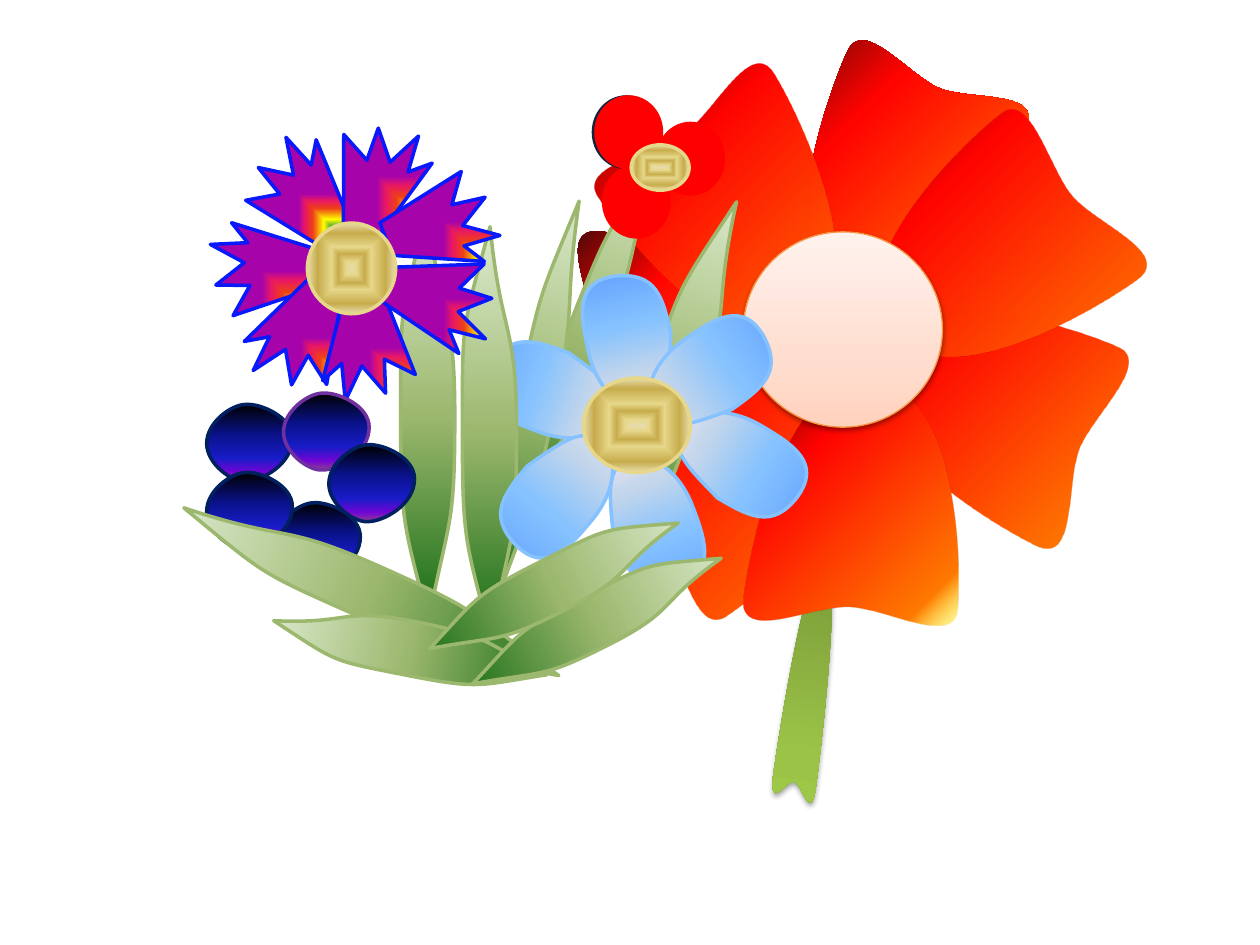
from dataclasses import dataclass, replace
from typing import Optional, Union

from lxml.etree import SubElement
from pptx import Presentation
from pptx.dml.color import RGBColor
from pptx.enum.shapes import MSO_SHAPE
from pptx.oxml.ns import qn
from pptx.oxml.xmlchemy import OxmlElement
from pptx.util import Pt

PX = 9144  # EMU; 100 px to the inch
CORNER = (100, 100, 0, 0)
CENTRE = (50, 50, 50, 50)


@dataclass(frozen=True)
class Gradient:
    stops: tuple  # (position, colour[, opacity]) in percent
    angle: Optional[int] = None
    form: str = ""
    focus: tuple = CORNER
    turns: bool = True


@dataclass(frozen=True)
class Outline:
    """First point, then line ends or, when curved, triples of Bezier points."""
    width: int
    height: int
    points: tuple
    curved: bool = True


@dataclass(frozen=True)
class Kind:
    fill: Union[Gradient, str]
    size: tuple
    outline: Optional[Outline] = None  # None is an ellipse
    line: str = ""
    line_pt: float = 2
    shadow: tuple = ()  # opacity percent, blur pt, distance pt


@dataclass(frozen=True)
class Part:
    kind: Kind
    left: int
    top: int
    rotation: float = 0
    size: tuple = ()


@dataclass(frozen=True)
class Theme:
    poppy: Gradient = Gradient(((0, "FFF200", 34), (12, "FF7A00"), (70, "FF0300"),
                                (100, "4D0808")), form="circle", turns=False)
    poppy_back: Gradient = Gradient(((0, "FFF200"), (12, "FF7A00"), (70, "FF0300"),
                                     (100, "4D0808")), form="circle", turns=False)
    stem: Gradient = Gradient(((0, "779737"), (80, "9BC348"), (100, "9DC746")), 270)
    peach: Gradient = Gradient(((0, "FFD2BD"), (35, "FFDED0"), (100, "FFF2ED")), 270)
    leaf: Gradient = Gradient(((0, "DDEBCF"), (50, "9CB86E"), (100, "156B13")), 90)
    sky: Gradient = Gradient(((0, "5E9EFF"), (40, "85C2FF"), (70, "C4D6EB"),
                              (100, "FFEBFA")), 90)
    cornflower: Gradient = Gradient(
        ((0, "A603AB"), (21, "0819FB"), (35, "1A8D48"), (52, "FFFF00"), (73, "EE3F17"),
         (88, "E81766"), (100, "A603AB")), form="rect", turns=False)
    night: Gradient = Gradient(((0, "000000"), (40, "0A128C"), (70, "181CC7"),
                                (88, "7005D4"), (100, "8C3D91")), 90)
    dusk: Gradient = Gradient(((0, "000000"), (20, "000040"), (50, "400040"),
                               (75, "8F0040"), (90, "F27300"), (100, "FFBF00")), 90)
    gold: Gradient = Gradient(
        ((0, "E6DCAC"), (12, "E6D78A"), (30, "C7AC4C"), (45, "E6D78A"), (77, "C7AC4C"),
         (100, "E6DCAC")), form="shape", focus=CENTRE)
    red: str = "FF0000"
    peach_line: str = "F69240"
    leaf_line: str = "9CB86E"
    sky_line: str = "85C2FF"
    cornflower_line: str = "0819FB"
    night_line: str = "002060"
    violet_line: str = "7030A0"
    dusk_line: str = "0F243E"
    gold_line: str = "E6D78A"
    shadow: str = "000000"


THEME = Theme()

POPPY_OUTLINE = Outline(171, 194, (
    (1, 12), (3, -18), (59, 13), (87, 14), (116, 15), (173, -14), (171, 19),
    (168, 52), (140, 198), (70, 193), (-1, 189), (-2, 42), (1, 12)))
LEAF_OUTLINE = Outline(43, 326, (
    (0, 163), (0, 73), (-1, 84), (22, 0), (31, 90), (43, 73), (43, 163),
    (43, 252), (39, 241), (22, 326), (3, 249), (0, 253), (0, 163)))
SKY_OUTLINE = Outline(67, 106, (
    (0, 54), (0, 24), (1, -3), (34, 0), (66, 4), (67, 24), (67, 54),
    (57, 92), (52, 106), (34, 106), (15, 106), (0, 83), (0, 54)))
NIGHT_OUTLINE = Outline(68, 61, (
    (0, 31), (0, 14), (20, 0), (31, 0), (43, -1), (68, 10), (68, 27),
    (68, 48), (43, 61), (31, 61), (20, 62), (0, 47), (0, 31)))
CORNFLOWER_OUTLINE = Outline(84, 90, (
    (0, 50), (27, 45), (10, 24), (38, 30), (32, 0), (52, 22), (56, 2),
    (84, 70), (65, 90)), curved=False)

POPPY = Kind(THEME.poppy, (171, 194), POPPY_OUTLINE)
POPPY_BACK = Kind(THEME.poppy_back, (155, 194), POPPY_OUTLINE)
STEM = Kind(THEME.stem, (35, 194), POPPY_OUTLINE, shadow=(35, 3.1, 1.8))
POPPY_HEART = Kind(THEME.peach, (158, 155), line=THEME.peach_line, line_pt=0.75,
                   shadow=(38, 3.1, 1.6))
LEAF = Kind(THEME.leaf, (43, 326), LEAF_OUTLINE, THEME.leaf_line)
SKY = Kind(THEME.sky, (67, 106), SKY_OUTLINE, THEME.sky_line)
CORNFLOWER = Kind(THEME.cornflower, (84, 90), CORNFLOWER_OUTLINE, THEME.cornflower_line)
NIGHT = Kind(THEME.night, (68, 61), NIGHT_OUTLINE, THEME.night_line)
VIOLET = replace(NIGHT, line=THEME.violet_line)
GOLD_HEART = Kind(THEME.gold, (70, 72), line=THEME.gold_line)
RED_DOT = Kind(THEME.red, (52, 56), line=THEME.red)
DUSK_DOT = Kind(THEME.dusk, (52, 56), line=THEME.dusk_line)
NARROW_LEAF, SHORT_LEAF = (30, 333), (43, 221)

BIG_POPPY = (
    Part(POPPY_BACK, 475, 164, 270), Part(POPPY_BACK, 637, 50, 20.6),
    Part(POPPY, 693, 230, 109.5), Part(POPPY, 508, 75, 322.5),
    Part(STEM, 623, 441, 186.8), Part(POPPY, 505, 273, 231.5),
    Part(POPPY, 590, 301, 180), Part(POPPY, 703, 113, 47.6),
    Part(POPPY_HEART, 590, 184),
)
BOUQUET = (
    Part(LEAF, 447, 107, 21.6, NARROW_LEAF), Part(LEAF, 410, 156, 11.9, NARROW_LEAF),
    Part(LEAF, 512, 152, 18.1),
    Part(SKY, 405, 258, 290.3), Part(SKY, 466, 218, 347.8), Part(SKY, 554, 314, 120.4),
    Part(LEAF, 367, 180),
    Part(SKY, 529, 244, 54.7), Part(SKY, 485, 361, 159.1), Part(SKY, 410, 339, 219.8),
    Part(LEAF, 318, 167),
    Part(CORNFLOWER, 195, 109), Part(CORNFLOWER, 257, 95, 58.6),
    Part(CORNFLOWER, 166, 170, 309.7), Part(CORNFLOWER, 197, 223, 248.2),
    Part(CORNFLOWER, 251, 231, 216.8), Part(CORNFLOWER, 310, 192, 146.4),
    Part(CORNFLOWER, 310, 131, 116.2),
    Part(NIGHT, 164, 321), Part(VIOLET, 225, 312), Part(NIGHT, 261, 353),
    Part(NIGHT, 218, 399), Part(NIGHT, 164, 375),
    Part(GOLD_HEART, 244, 177), Part(GOLD_HEART, 463, 300, size=(85, 75)),
    Part(RED_DOT, 522, 98), Part(LEAF, 273, 307, 294.1),
    Part(DUSK_DOT, 471, 77), Part(RED_DOT, 473, 77),
    Part(LEAF, 304, 404, 281.2, SHORT_LEAF), Part(RED_DOT, 479, 132),
    Part(LEAF, 452, 382, 63.2, SHORT_LEAF), Part(LEAF, 418, 354, 63.2, SHORT_LEAF),
    Part(GOLD_HEART, 501, 115, size=(46, 36)),
)


def add_child(parent, tag: str, **attributes):
    return SubElement(parent, qn(tag), {key: str(val) for key, val in attributes.items()})


def add_colour(parent, colour: str, opacity: int = 100) -> None:
    node = add_child(parent, "a:srgbClr", val=colour)
    if opacity < 100:
        add_child(node, "a:alpha", val=opacity * 1000)


def bend(shape, outline: Outline) -> None:
    """Turn the straight segments of a freeform into Bezier curves."""
    curve = shape._element.find(".//" + qn("a:path"))
    curve.clear()
    curve.set("w", str(outline.width))
    curve.set("h", str(outline.height))
    start, *rest = outline.points
    steps = [("a:moveTo", [start])]
    steps += [("a:cubicBezTo", rest[i:i + 3]) for i in range(0, len(rest), 3)]
    for tag, points in steps:
        step = add_child(curve, tag)
        for x, y in points:
            add_child(step, "a:pt", x=x, y=y)
    add_child(curve, "a:close")


def paint(shape, fill: Union[Gradient, str]) -> None:
    if isinstance(fill, str):
        shape.fill.solid()
        shape.fill.fore_color.rgb = RGBColor.from_string(fill)
        return
    shape.fill.background()
    empty = shape._element.spPr.find(qn("a:noFill"))
    node = OxmlElement("a:gradFill")
    node.set("rotWithShape", str(int(fill.turns)))
    stops = add_child(node, "a:gsLst")
    for position, *colour in fill.stops:
        add_colour(add_child(stops, "a:gs", pos=position * 1000), *colour)
    if fill.angle is not None:
        add_child(node, "a:lin", ang=fill.angle * 60000, scaled=0)
    else:
        sides = {side: val * 1000 for side, val in zip("ltrb", fill.focus)}
        add_child(add_child(node, "a:path", path=fill.form), "a:fillToRect", **sides)
    empty.getparent().replace(empty, node)


def draw(shapes, part: Part) -> None:
    kind, outline = part.kind, part.kind.outline
    width, height = part.size or kind.size
    place = {"left": part.left * PX, "top": part.top * PX, "width": width * PX,
             "height": height * PX, "rotation": part.rotation}
    if outline:
        builder = shapes.build_freeform(*outline.points[0], scale=PX)
        builder.add_line_segments(outline.points[1:], close=True)
        shape = builder.convert_to_shape(part.left * PX, part.top * PX)
        if outline.curved:
            bend(shape, outline)
    else:
        shape = shapes.add_shape(MSO_SHAPE.OVAL, *list(place.values())[:4])
    for attribute, value in place.items():
        setattr(shape, attribute, value)
    paint(shape, kind.fill)
    if kind.line:
        shape.line.color.rgb = RGBColor.from_string(kind.line)
        shape.line.width = Pt(kind.line_pt)
    else:
        shape.line.fill.background()
    shape.shadow.inherit = False
    if kind.shadow:
        opacity, blur, distance = kind.shadow
        effects = shape._element.spPr.find(qn("a:effectLst"))
        cast = add_child(effects, "a:outerShdw", blurRad=int(Pt(blur)),
                         dist=int(Pt(distance)), dir=90 * 60000, rotWithShape=0)
        add_colour(cast, THEME.shadow, opacity)


def main() -> None:
    deck = Presentation()
    deck.slide_width, deck.slide_height = 1000 * PX, 750 * PX
    slide = deck.slides.add_slide(deck.slide_layouts[6])
    for flowers in (BIG_POPPY, BOUQUET):
        group = slide.shapes.add_group_shape()
        for part in flowers:
            draw(group.shapes, part)
    deck.save("out.pptx")


if __name__ == "__main__":
    main()
